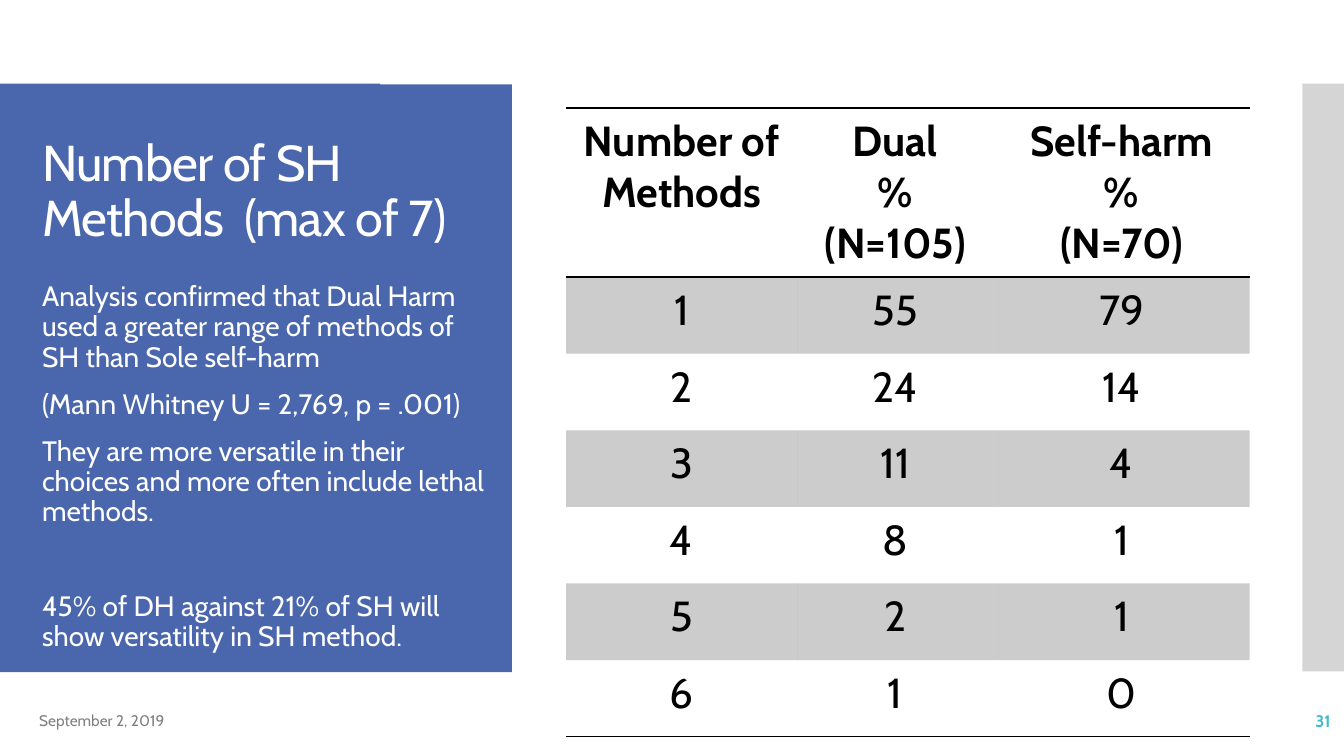
from lxml import etree
from pptx import Presentation
from pptx import util as u
from pptx.dml.color import RGBColor
from pptx.enum import shapes, text
from pptx.oxml import ns

FONT = "Cabin"
WHITE, BLACK, BLUE, SILVER = "FFFFFF", "000000", "4A66AC", "C8C8C8"
GREY, CYAN = "808080", "40BAD2"
NO_STYLE = "{2D5ABB26-0587-4C30-8999-92F81FD0307C}"
LEFT, CENTER, RIGHT = text.PP_ALIGN.LEFT, text.PP_ALIGN.CENTER, text.PP_ALIGN.RIGHT
TOP, MIDDLE = text.MSO_ANCHOR.TOP, text.MSO_ANCHOR.MIDDLE

COLUMN_WIDTHS = [5.82, 4.95, 6.45]
HEADER_HEIGHT, ROW_HEIGHT = 3.28, 1.93
HEADER = [["Number of", "Methods"], ["Dual", "%", "(N=105)"], ["Self-harm", "%", "(N=70)"]]
ROWS = [(1, 55, 79), (2, 24, 14), (3, 11, 4), (4, 8, 1), (5, 2, 1), (6, 1, 0)]

# Findings, each with its space before in points
FINDINGS = [
    ("Analysis confirmed that Dual Harm used a greater range of methods of SH than Sole self-harm", 12),
    ("(Mann Whitney U = 2,769, p = .001)", 12),
    ("They are more versatile in their choices and more often include lethal methods.", 12),
    ("45% of DH against 21% of SH will show versatility in SH method.", 46),
]


def paint(fill, colour, opacity=100):
    fill.solid()
    fill.fore_color.rgb = RGBColor.from_string(colour)
    if opacity < 100:
        for tag in fill._xPr.iter(ns.qn("a:srgbClr")):
            etree.SubElement(tag, ns.qn("a:alpha"), val=str(opacity * 1000))


def add_panel(page, left, top, width, height, colour, opacity=100):
    panel = page.shapes.add_shape(shapes.MSO_SHAPE.RECTANGLE, *map(u.Cm, (left, top, width, height)))
    panel.shadow.inherit = False
    panel.line.fill.background()
    paint(panel.fill, colour, opacity)


def write(para, words, size, colour, bold=False, align=LEFT):
    para.alignment = align
    span = para.add_run()
    span.text = words
    span.font.name = FONT
    span.font.size = u.Pt(size)
    span.font.bold = bold
    span.font.color.rgb = RGBColor.from_string(colour)
    return span


def paragraphs(frame, count):
    return [frame.paragraphs[0]] + [frame.add_paragraph() for _ in range(count - 1)]


def add_box(page, left, top, width, height, anchor):
    box = page.shapes.add_textbox(*map(u.Cm, (left, top, width, height)))
    box.text_frame.word_wrap = True
    box.text_frame.vertical_anchor = anchor
    return box.text_frame


def set_title(page, words):
    title = page.shapes.title
    title.left, title.top, title.width, title.height = map(u.Cm, (0.81, 3.12, 11.15, 3.48))
    frame = title.text_frame
    frame.auto_size = text.MSO_AUTO_SIZE.NONE
    frame.vertical_anchor = MIDDLE
    para = frame.paragraphs[0]
    para.line_spacing = 0.9
    span = write(para, words, 36, WHITE)
    span.font._element.set("spc", "-60")


def add_findings(page):
    frame = add_box(page, 0.81, 6.99, 11.91, 9.96, TOP)
    for para, (words, gap) in zip(paragraphs(frame, len(FINDINGS)), FINDINGS):
        para.line_spacing = 0.9
        para.space_before = u.Pt(gap)
        write(para, words, 20, WHITE)


def add_footer(page, left, width, words, size, colour, bold=False, align=LEFT):
    para = add_box(page, left, 17.65, width, 1.02, MIDDLE).paragraphs[0]
    para.space_after = u.Pt(6)
    write(para, words, size, colour, bold, align)


def add_borders(cell, sides):
    properties = cell._tc.get_or_add_tcPr()
    for place, side in enumerate(sides):
        line = etree.Element(ns.qn("a:ln" + side), w=str(u.Pt(1)))
        solid = etree.SubElement(line, ns.qn("a:solidFill"))
        etree.SubElement(solid, ns.qn("a:srgbClr"), val=BLACK)
        properties.insert(place, line)


def fill_cell(cell, lines, bold, shaded, sides):
    cell.margin_left = cell.margin_right = u.Cm(0.43)
    cell.margin_top = cell.margin_bottom = u.Cm(0.2)
    for para, words in zip(paragraphs(cell.text_frame, len(lines)), lines):
        write(para, words, 30, BLACK, bold, CENTER)
    if shaded:
        paint(cell.fill, BLACK, 20)
    else:
        cell.fill.background()
    add_borders(cell, sides)


def add_methods_table(page):
    content = [HEADER] + [[[str(value)] for value in row] for row in ROWS]
    height = HEADER_HEIGHT + ROW_HEIGHT * len(ROWS)
    table = page.shapes.add_table(len(content), len(HEADER), u.Cm(14.27), u.Cm(2.72),
                                  u.Cm(sum(COLUMN_WIDTHS)), u.Cm(height)).table
    table.first_row = table.horz_banding = False
    table._tbl.tblPr.find(ns.qn("a:tableStyleId")).text = NO_STYLE
    for column, width in zip(table.columns, COLUMN_WIDTHS):
        column.width = u.Cm(width)
    for number, cells in enumerate(content):
        header, last = number == 0, number == len(ROWS)
        table.rows[number].height = u.Cm(HEADER_HEIGHT if header else ROW_HEIGHT)
        sides = "TB" if header else "B" if last else ""
        for column, lines in enumerate(cells):
            fill_cell(table.cell(number, column), lines, header, number % 2 == 1, sides)


def main():
    deck = Presentation()
    deck.slide_width, deck.slide_height = u.Cm(33.87), u.Cm(19.05)
    page = deck.slides.add_slide(deck.slide_layouts[5])

    # Side panels, with the title brought in front of them
    add_panel(page, 32.82, 2.11, 1.05, 14.81, SILVER, 75)
    add_panel(page, 0, 2.11, 9.58, 14.81, BLUE)
    add_panel(page, 0, 2.13, 12.9, 14.81, BLUE)
    page.shapes._spTree.append(page.shapes.title._element)
    set_title(page, "Number of SH Methods  (max of 7)")

    # Table and findings
    add_methods_table(page)
    add_findings(page)

    # Date and page number
    add_footer(page, 0.74, 7.62, "September 2, 2019", 11, GREY)
    add_footer(page, 29.54, 4.24, "31", 12, CYAN, True, RIGHT)
    deck.save("out.pptx")


if __name__ == "__main__":
    main()
